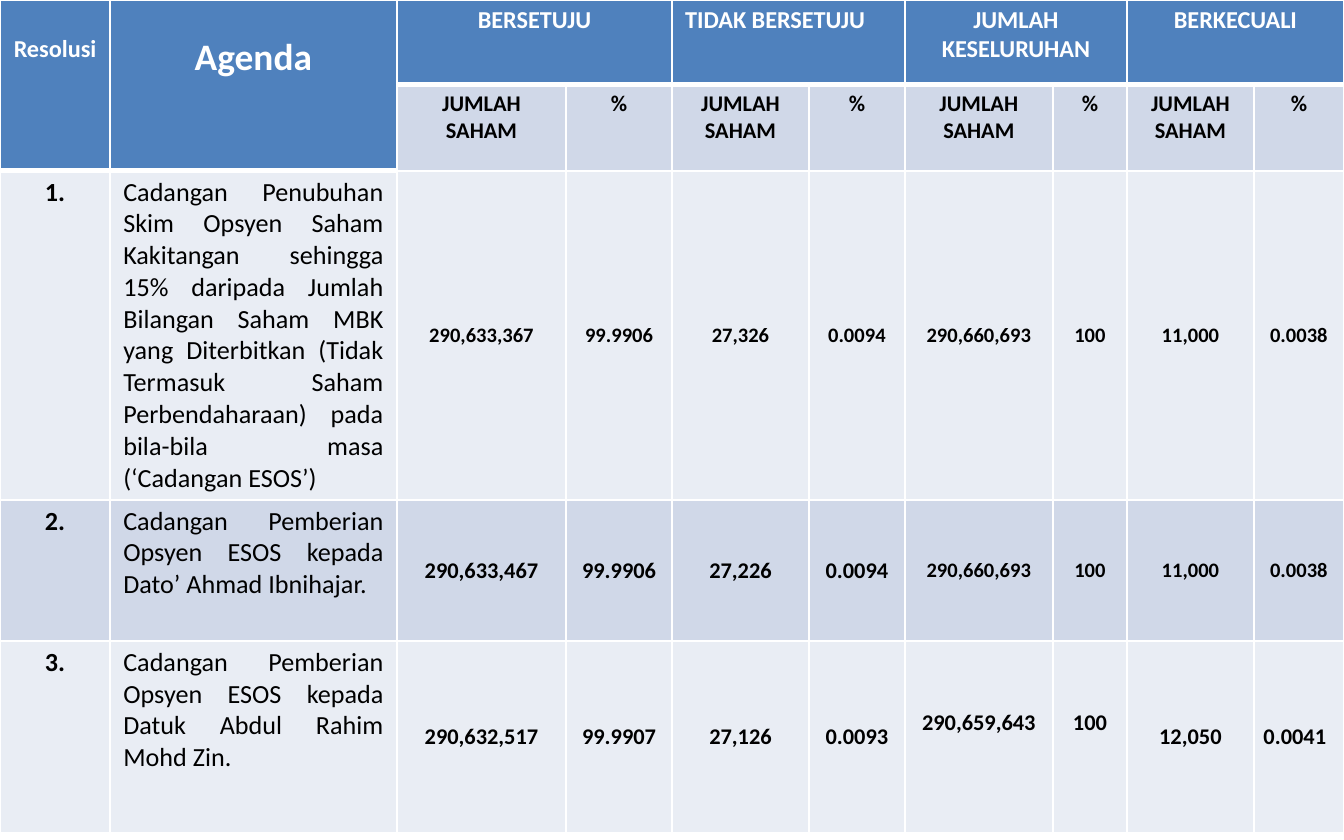
from dataclasses import dataclass

from lxml import etree
from pptx import Presentation
from pptx import util as u
from pptx.dml.color import RGBColor
from pptx.enum import text
from pptx.oxml import ns

CENTER, LEFT, JUSTIFY = text.PP_ALIGN.CENTER, text.PP_ALIGN.LEFT, text.PP_ALIGN.JUSTIFY


@dataclass(frozen=True)
class Theme:
    font: str = "Calibri"
    header_fill: str = "4F81BD"
    dark_band: str = "D0D8E8"
    light_band: str = "E9EDF4"
    border: str = "FFFFFF"
    header_ink: str = "FFFFFF"
    ink: str = "000000"
    agenda_size: int = 20
    body_size: int = 14
    header_size: int = 13
    label_size: int = 12
    small_size: int = 11


class VoteSlide:
    """Holds the theme and the current slide."""

    def __init__(self, deck, theme):
        self.theme = theme
        self.slide = deck.slides.add_slide(deck.slide_layouts[6])

    def table(self, widths, heights):
        frame = self.slide.shapes.add_table(
            len(heights), len(widths), 0, 0, u.Cm(sum(widths)), u.Cm(sum(heights)))
        for column, width in zip(frame.table.columns, widths):
            column.width = u.Cm(width)
        for row, height in zip(frame.table.rows, heights):
            row.height = u.Cm(height)
        return frame.table

    def borders(self, cell, **widths):
        properties = cell._tc.get_or_add_tcPr()
        for side, points in widths.items():
            line = etree.SubElement(properties, ns.qn(f"a:ln{side}"), w=str(u.Pt(points)))
            fill = etree.SubElement(line, ns.qn("a:solidFill"))
            etree.SubElement(fill, ns.qn("a:srgbClr"), val=self.theme.border)

    def fill(self, cell, color):
        cell.fill.solid()
        cell.fill.fore_color.rgb = RGBColor.from_string(color)

    def label(self, cell, words, size, color=None, bold=True, align=CENTER,
              middle=False, side=0.25, top=0.1, bottom=0.1):
        anchor = text.MSO_ANCHOR.MIDDLE if middle else text.MSO_ANCHOR.TOP
        layout = {"margin_left": u.Cm(side), "margin_right": u.Cm(side),
                  "margin_top": u.Cm(top), "margin_bottom": u.Cm(bottom),
                  "vertical_anchor": anchor}
        for key, value in layout.items():
            setattr(cell, key, value)
        paragraph = cell.text_frame.paragraphs[0]
        paragraph.alignment = align
        run = paragraph.add_run()
        run.text = words
        font = {"name": self.theme.font, "size": u.Pt(size), "bold": bold}
        for key, value in font.items():
            setattr(run.font, key, value)
        run.font.color.rgb = RGBColor.from_string(color or self.theme.ink)

    def figure(self, cell, words, size, align=CENTER, bottom=0):
        self.label(cell, words, size, align=align, middle=True,
                   side=0.18, top=0, bottom=bottom)


COLUMN_WIDTHS = [2.08, 5.42, 3.2, 2, 2.59, 1.81, 2.8, 1.4, 2.4, 1.7]
ROW_HEIGHTS = [1.6, 1.63, 6.22, 2.67, 3.63]
VOTE_GROUPS = ["BERSETUJU", "TIDAK BERSETUJU", "JUMLAH KESELURUHAN", "BERKECUALI"]
RESOLUTIONS = [
    ("Cadangan Penubuhan Skim Opsyen Saham Kakitangan sehingga 15% daripada Jumlah "
     "Bilangan Saham MBK yang Diterbitkan (Tidak Termasuk Saham Perbendaharaan) pada "
     "bila-bila masa (‘Cadangan ESOS’)",
     ["290,633,367", "99.9906", "27,326", "0.0094",
      "290,660,693", "100", "11,000", "0.0038"]),
    ("Cadangan Pemberian Opsyen ESOS kepada Dato’ Ahmad Ibnihajar.",
     ["290,633,467", "99.9906", "27,226", "0.0094",
      "290,660,693", "100", "11,000", "0.0038"]),
    ("Cadangan Pemberian Opsyen ESOS kepada Datuk Abdul Rahim Mohd Zin.",
     ["290,632,517", "99.9907", "27,126", "0.0093",
      "290,659,643", "100", "12,050", "0.0041"]),
]


def main():
    deck = Presentation()
    deck.slide_width, deck.slide_height = u.Cm(25.4), u.Cm(15.88)
    theme = Theme()
    page = VoteSlide(deck, theme)
    votes = page.table(COLUMN_WIDTHS, ROW_HEIGHTS)

    # Borders and banding
    for row in range(len(ROW_HEIGHTS)):
        for column in range(len(COLUMN_WIDTHS)):
            cell = votes.cell(row, column)
            is_header = row == 0 or (row == 1 and column < 2)
            edges = {"L": 1, "R": 1}
            if row == 0:
                edges["T"] = 1
            edges["B"] = 3 if is_header else 1
            page.borders(cell, **edges)
            band = theme.dark_band if row % 2 else theme.light_band
            page.fill(cell, theme.header_fill if is_header else band)

    # Headings that span both header rows
    for column, (heading, size) in enumerate(
            [("Resolusi", theme.header_size), ("Agenda", theme.agenda_size)]):
        votes.cell(0, column).merge(votes.cell(1, column))
        page.label(votes.cell(0, column), heading, size, theme.header_ink, top=0.66)

    # Vote groups, each with a share count and a percentage
    for index, group in enumerate(VOTE_GROUPS):
        column = 2 + 2 * index
        votes.cell(0, column).merge(votes.cell(0, column + 1))
        page.label(votes.cell(0, column), group, theme.header_size, theme.header_ink,
                   align=LEFT if group == "TIDAK BERSETUJU" else CENTER)
        for offset, measure in enumerate(["JUMLAH SAHAM", "%"]):
            page.label(votes.cell(1, column + offset), measure, theme.label_size)

    # Resolutions and their results
    for number, (agenda, results) in enumerate(RESOLUTIONS, 1):
        row = number + 1
        page.label(votes.cell(row, 0), f"{number}.", theme.body_size)
        page.label(votes.cell(row, 1), agenda, theme.body_size, bold=False, align=JUSTIFY)
        for column, result in enumerate(results, 2):
            is_small = number == 1 or (number == 2 and column >= 6)
            is_raised = number == 3 and column in (6, 7)
            is_left = number == 3 and column == 9
            page.figure(votes.cell(row, column), result,
                        theme.small_size if is_small else theme.label_size,
                        align=LEFT if is_left else CENTER,
                        bottom=0.52 if is_raised else 0)

    deck.save("out.pptx")


if __name__ == "__main__":
    main()
